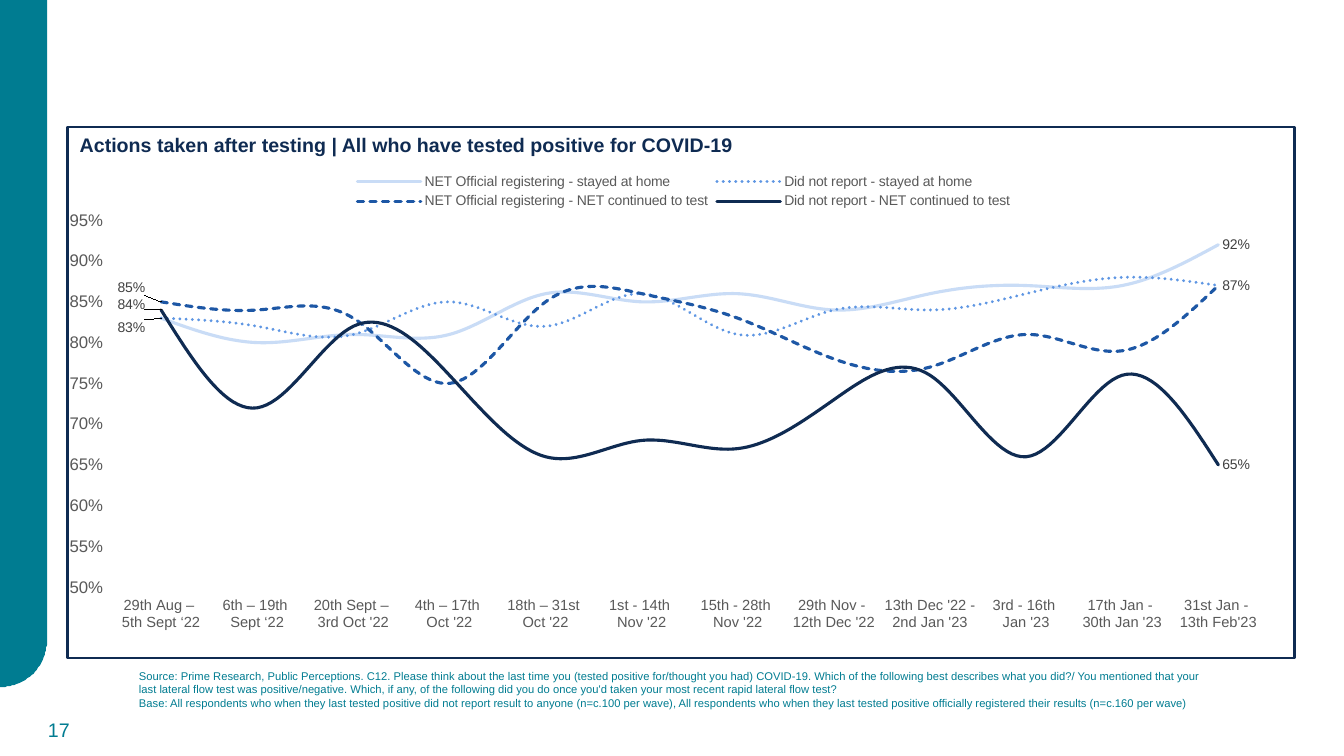
import math
from dataclasses import dataclass, field

import pptx
import pptx.chart.data
import pptx.dml.color
import pptx.enum.chart
import pptx.enum.dml
import pptx.enum.shapes
import pptx.enum.text
import pptx.oxml
import pptx.oxml.ns
import pptx.util

PX = 9144  # EMU in one px, 100 px to the inch
Dash = pptx.enum.dml.MSO_LINE
Side = pptx.enum.chart.XL_LABEL_POSITION
Align = pptx.enum.text.PP_ALIGN
qn = pptx.oxml.ns.qn


@dataclass(frozen=True)
class Theme:
    teal: str = "007C91"
    navy: str = "0F2B52"
    blue: str = "1D57A5"
    sky: str = "5E96E3"
    pale: str = "C9DCF6"
    white: str = "FFFFFF"
    grey: str = "595959"
    dark: str = "404040"
    face: str = "Arial"
    head: float = 14
    note: float = 8
    tick: float = 12
    date: float = 10.5
    label: float = 10


@dataclass(frozen=True)
class Box:
    left: int
    top: int
    width: int
    height: int

    def emu(self) -> list[int]:
        return [n * PX for n in (self.left, self.top, self.width, self.height)]


@dataclass(frozen=True)
class Trend:
    name: str
    color: str
    dash: Dash
    rates: tuple[int, ...]
    ends: bool = True
    shift: tuple[float, float] | None = None  # offset of the first label


THEME = Theme()
TITLE = "Actions taken after testing | All who have tested positive for COVID-19"
NOTE = (
    "Source: Prime Research, Public Perceptions. C12. Please think about the last time you "
    "(tested positive for/thought you had) COVID-19. Which of the following best describes "
    "what you did?/ You mentioned that your last lateral flow test was positive/negative. "
    "Which, if any, of the following did you do once you'd taken your most recent rapid "
    "lateral flow test?\n"
    "Base: All respondents who when they last tested positive did not report result to anyone "
    "(n=c.100 per wave), All respondents who when they last tested positive officially "
    "registered their results (n=c.160 per wave)"
)
WAVES = (
    "29th Aug – \n5th Sept ‘22", "6th – 19th \nSept ‘22", "20th Sept – \n3rd Oct '22",
    "4th – 17th \nOct '22", "18th – 31st \nOct '22", "1st - 14th \nNov '22",
    "15th - 28th \nNov '22", "29th Nov - \n12th Dec '22", "13th Dec '22 -\n2nd Jan '23",
    "3rd - 16th \nJan '23", "17th Jan - \n30th Jan '23", "31st Jan - \n13th Feb'23",
)
TRENDS = (
    Trend("NET Official registering - stayed at home", THEME.pale, Dash.SOLID,
          (83, 80, 81, 81, 86, 85, 86, 84, 86, 87, 87, 92)),
    Trend("Did not report - stayed at home", THEME.sky, Dash.ROUND_DOT,
          (83, 82, 81, 85, 82, 86, 81, 84, 84, 86, 88, 87), False, (-0.01, 0.02)),
    Trend("NET Official registering - NET continued to test", THEME.blue, Dash.SQUARE_DOT,
          (85, 84, 83, 75, 85, 86, 83, 78, 77, 81, 79, 87), True, (-0.01, -0.03)),
    Trend("Did not report - NET continued to test", THEME.navy, Dash.SOLID,
          (84, 72, 82, 76, 66, 68, 67, 73, 76, 66, 76, 65), True, (-0.01, -0.01)),
)


def rgb(color: str) -> pptx.dml.color.RGBColor:
    return pptx.dml.color.RGBColor.from_string(color)


def style(font, size: float, color: str, bold: bool = False) -> None:
    font.name, font.size, font.bold = THEME.face, pptx.util.Pt(size), bold
    font.color.rgb = rgb(color)


def paint(shape, fill: str, line: str, width: float) -> None:
    shape.shadow.inherit = False
    shape.fill.solid()
    shape.fill.fore_color.rgb = rgb(fill)
    shape.line.color.rgb = rgb(line)
    shape.line.width = pptx.util.Pt(width)


def write(shape, text: str, size: float, color: str, bold: bool = False,
          align: Align = Align.LEFT) -> None:
    frame = shape.text_frame
    frame.text = text
    frame.word_wrap = True
    frame.auto_size = pptx.enum.text.MSO_AUTO_SIZE.NONE
    frame.vertical_anchor = pptx.enum.text.MSO_ANCHOR.MIDDLE
    for para in frame.paragraphs:
        para.alignment = align
        for run in para.runs:
            style(run.font, size, color, bold)


def add_band(shapes, width: int, straight: int) -> None:
    """Draw the left band, with its lower right corner rounded."""
    arc = [(width * math.cos(math.radians(deg)), straight + width * math.sin(math.radians(deg)))
           for deg in range(0, 91, 3)]
    pen = shapes.build_freeform(0, 0, scale=PX)
    pen.add_line_segments([(width, 0), *arc], close=True)
    paint(pen.convert_to_shape(), THEME.teal, THEME.teal, 1)


def layout(x: float, y: float, size: tuple[float, float] | None = None):
    """Make a manual chart layout: an offset, or a whole inner area if size is given."""
    parts = {"x": x, "y": y}
    if size:
        parts = {"layoutTarget": "inner", "xMode": "edge", "yMode": "edge", **parts,
                 "w": size[0], "h": size[1]}
    body = "".join(f'<c:{key} val="{val}"/>' for key, val in parts.items())
    return pptx.oxml.parse_xml(
        f'<c:layout {pptx.oxml.ns.nsdecls("c")}><c:manualLayout>{body}</c:manualLayout></c:layout>')


def add_label(series, spot: int, side: Side):
    label = series.points[spot].data_label
    style(label.font, THEME.label, THEME.dark)
    label.position = side
    return label


def add_leads(series) -> None:
    """Turn on leader lines for the moved labels."""
    uri = "http://schemas.microsoft.com/office/drawing/2012/chart"
    series.data_labels._element.append(pptx.oxml.parse_xml(
        f'<c:extLst {pptx.oxml.ns.nsdecls("c")}>'
        f'<c:ext uri="{{CE6537A1-D6FC-4f65-9D91-7224C49458BB}}" xmlns:c15="{uri}">'
        '<c15:showLeaderLines val="1"/></c:ext></c:extLst>'))


def draw_trend(series, trend: Trend) -> None:
    series.smooth = True
    series.marker.style = pptx.enum.chart.XL_MARKER_STYLE.NONE
    line = series.format.line
    line.color.rgb = rgb(trend.color)
    line.width = pptx.util.Pt(2.25)
    line.dash_style = trend.dash
    series._element.find(".//" + qn("a:ln")).set("cap", "rnd")
    series.data_labels.show_value = False
    if trend.shift:
        label = add_label(series, 0, Side.LEFT)
        label._dLbl.find(qn("c:idx")).addnext(layout(*trend.shift))
        add_leads(series)
    if trend.ends:
        add_label(series, len(WAVES) - 1, Side.RIGHT)


def add_graph(shapes, box: Box) -> None:
    data = pptx.chart.data.CategoryChartData(number_format="0%")
    data.categories = WAVES
    for trend in TRENDS:
        data.add_series(trend.name, [rate / 100 for rate in trend.rates])
    kind = pptx.enum.chart.XL_CHART_TYPE.LINE
    chart = shapes.add_chart(kind, *box.emu(), data).chart
    style(chart.font, THEME.label, THEME.dark)
    chart.has_title = False
    chart.has_legend = True
    chart.legend.position = pptx.enum.chart.XL_LEGEND_POSITION.TOP
    chart.legend.include_in_layout = False
    style(chart.legend.font, THEME.label, THEME.grey)
    for axis, size in ((chart.category_axis, THEME.date), (chart.value_axis, THEME.tick)):
        style(axis.tick_labels.font, size, THEME.grey)
        axis.format.line.fill.background()
        axis.has_major_gridlines = False
    scale = chart.value_axis
    scale.minimum_scale, scale.maximum_scale, scale.major_unit = 0.5, 0.95, 0.05
    scale.tick_labels.number_format = "0%"
    scale.tick_labels.number_format_is_linked = False
    plot = chart.plots[0]
    plot.vary_by_categories = False
    for series, trend in zip(plot.series, TRENDS):
        draw_trend(series, trend)
    area = chart._chartSpace.chart.plotArea
    for old in area.findall(qn("c:layout")):
        area.remove(old)
    area.insert(0, layout(0.033, 0.121, (0.944, 0.765)))


def main() -> None:
    deck = pptx.Presentation()
    deck.slide_width, deck.slide_height = 1333 * PX, 750 * PX
    slide = deck.slides.add_slide(deck.slide_layouts[5])
    shapes = slide.shapes
    add_band(shapes, 46, 635)
    panel = shapes.add_shape(pptx.enum.shapes.MSO_SHAPE.RECTANGLE, *Box(67, 126, 1217, 527).emu())
    paint(panel, THEME.white, THEME.navy, 1.5)
    title = shapes.title
    title.left, title.top, title.width, title.height = Box(69, 127, 703, 34).emu()
    write(title, TITLE, THEME.head, THEME.navy, bold=True)
    panel._element.addnext(title._element)
    add_graph(shapes, Box(69, 161, 1215, 476))
    write(shapes.add_textbox(*Box(128, 664, 1094, 40).emu()), NOTE, THEME.note, THEME.teal)
    page = shapes.add_textbox(*Box(14, 704, 65, 40).emu())
    write(page, "17", THEME.head, THEME.teal, align=Align.RIGHT)
    deck.save("out.pptx")


if __name__ == "__main__":
    main()
